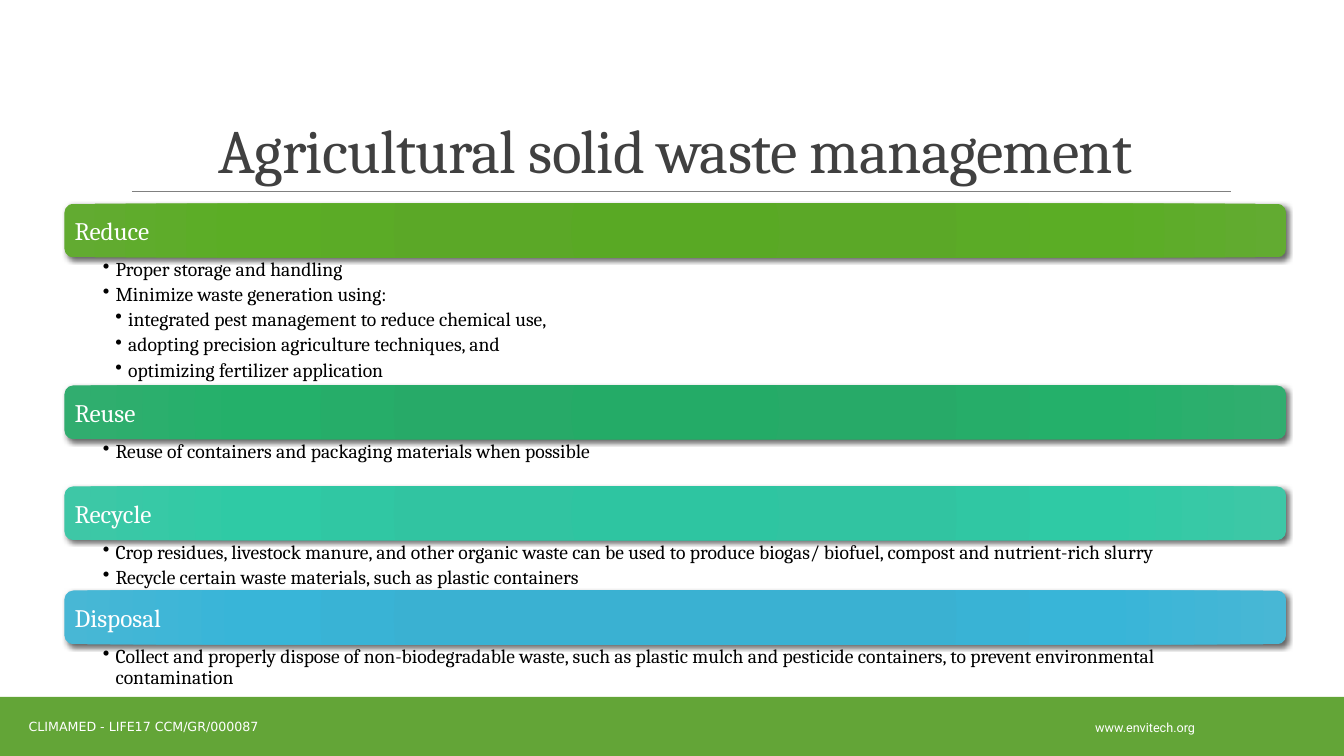
from dataclasses import dataclass

from lxml.etree import SubElement
from pptx import Presentation
from pptx.dml.color import RGBColor
from pptx.enum.shapes import MSO_CONNECTOR, MSO_SHAPE
from pptx.enum.text import MSO_ANCHOR, MSO_AUTO_SIZE, PP_ALIGN
from pptx.oxml import parse_xml
from pptx.oxml.ns import nsdecls, qn
from pptx.util import Pt


@dataclass(frozen=True)
class Theme:
    serif: str = "Cambria"
    ink: str = "000000"
    white: str = "FFFFFF"
    dark: str = "404040"
    rule: str = "808080"
    foot: str = "63A537"
    title: float = 44
    head: float = 18
    body: float = 14
    small: float = 9


class Deck:
    def __init__(self, theme):
        self.theme = theme
        self.prs = Presentation()
        self.prs.slide_width, self.prs.slide_height = Pt(960), Pt(540)
        self.slide = self.prs.slides.add_slide(self.prs.slide_layouts[5])

    def style(self, para, size, color, face):
        for run in para.runs:
            run.font.size = Pt(size)
            run.font.name = face
            run.font.color.rgb = RGBColor.from_string(color)

    def title(self, text, x, y, w, h):
        shape = self.slide.shapes.title
        shape.left, shape.top, shape.width, shape.height = map(Pt, (x, y, w, h))
        frame = shape.text_frame
        frame.text = text
        frame.word_wrap = True
        frame.auto_size = MSO_AUTO_SIZE.NONE
        frame.vertical_anchor = MSO_ANCHOR.BOTTOM
        para = frame.paragraphs[0]
        para.alignment = PP_ALIGN.CENTER
        para.line_spacing = 0.85
        self.style(para, self.theme.title, self.theme.dark, self.theme.serif)
        para.runs[0].font._element.set("spc", "-50")

    def line(self, x1, y1, x2, y2):
        line = self.slide.shapes.add_connector(
            MSO_CONNECTOR.STRAIGHT, Pt(x1), Pt(y1), Pt(x2), Pt(y2))
        line.line.color.rgb = RGBColor.from_string(self.theme.rule)
        line.line.width = Pt(0.5)
        SubElement(line._element.spPr, qn("a:effectLst"))

    def rect(self, x, y, w, h, color):
        shape = self.slide.shapes.add_shape(
            MSO_SHAPE.RECTANGLE, Pt(x), Pt(y), Pt(w), Pt(h))
        shape.shadow.inherit = False
        shape.fill.solid()
        shape.fill.fore_color.rgb = RGBColor.from_string(color)
        shape.line.fill.background()

    def bar(self, x, y, w, h, colors):
        shape = self.slide.shapes.add_shape(
            MSO_SHAPE.ROUNDED_RECTANGLE, Pt(x), Pt(y), Pt(w), Pt(h))
        shape.line.fill.background()
        stops = "".join(
            f'<a:gs pos="{pos}000"><a:srgbClr val="{color}"/></a:gs>'
            for pos, color in zip((0, 34, 70, 100), colors))
        props = shape._element.spPr
        props.find(qn("a:prstGeom")).addnext(parse_xml(
            f'<a:gradFill {nsdecls("a")} rotWithShape="1"><a:gsLst>{stops}</a:gsLst>'
            '<a:path path="circle"><a:fillToRect l="100000" t="100000" '
            'r="100000" b="100000"/></a:path></a:gradFill>'))
        props.append(parse_xml(
            f'<a:effectLst {nsdecls("a")}><a:outerShdw blurRad="{Pt(3.5)}" '
            f'dist="{Pt(2)}" dir="2700000" algn="br" rotWithShape="0">'
            '<a:srgbClr val="000000"><a:alpha val="60000"/></a:srgbClr>'
            '</a:outerShdw></a:effectLst>'))

    def box(self, x, y, w, h, pads, anchor):
        shape = self.slide.shapes.add_textbox(Pt(x), Pt(y), Pt(w), Pt(h))
        frame = shape.text_frame
        frame.word_wrap = True
        frame.vertical_anchor = anchor
        (frame.margin_left, frame.margin_top,
         frame.margin_right, frame.margin_bottom) = map(Pt, pads)
        return frame

    def label(self, text, x, y, w, h, size, face, pads, align):
        frame = self.box(x, y, w, h, pads, MSO_ANCHOR.MIDDLE)
        frame.text = text
        para = frame.paragraphs[0]
        para.alignment = align
        self.style(para, size, self.theme.white, face)

    def list(self, items, x, y, w, h):
        frame = self.box(x, y, w, h, (27.5, 1.6, 7.7, 1.6), MSO_ANCHOR.TOP)
        for num, (level, text) in enumerate(items):
            para = frame.paragraphs[0] if num == 0 else frame.add_paragraph()
            para.text = text
            para.level = level
            para.line_spacing = 0.9
            para.space_after = Pt(2.8)
            props = para._p.get_or_add_pPr()
            props.set("marL", str(Pt(9 * level)))
            props.set("indent", str(Pt(-9)))
            SubElement(props, qn("a:buChar")).set("char", "•")
            self.style(para, self.theme.body, self.theme.ink, self.theme.serif)


# Heading, gradient colours, list height, list of (level, text)
STEPS = [
    ("Reduce", ("59A924", "5BA827", "5BAD25", "62AB31"), 91.4, [
        (1, "Proper storage and handling"),
        (1, "Minimize waste generation using:"),
        (2, "integrated pest management to reduce chemical use,"),
        (2, "adopting precision agriculture techniques, and"),
        (2, "optimizing fertilizer application")]),
    ("Reuse", ("24AB67", "27AA68", "24B06A", "31AD6F"), 33.7, [
        (1, "Reuse of containers and packaging materials when possible")]),
    ("Recycle", ("2EC5A1", "31C4A1", "2FCAA5", "3EC7A6"), 36, [
        (1, "Crop residues, livestock manure, and other organic waste can be used "
            "to produce biogas/ biofuel, compost and nutrient-rich slurry"),
        (1, "Recycle certain waste materials, such as plastic containers")]),
    ("Disposal", ("37B1D3", "3AB1D2", "38B5D8", "48B7D5"), 33.7, [
        (1, "Collect and properly dispose of non-biodegradable waste, such as "
            "plastic mulch and pesticide containers, to prevent environmental "
            "contamination")]),
]


def main():
    theme = Theme()
    deck = Deck(theme)

    # Title and rule
    deck.line(94.3, 136.8, 879, 136.8)
    deck.title("Agricultural solid waste management", 86.4, 22.3, 792, 114.5)

    # Footer
    deck.rect(0, 497.7, 960, 42.3, theme.foot)
    pads = (7.2, 3.6, 7.2, 3.6)
    deck.label("www.envitech.org", 729.4, 504.9, 177, 28.8,
               theme.small, "Roboto", pads, PP_ALIGN.CENTER)
    deck.label("CLIMAMED - LIFE17 CCM/GR/000087", 0, 504.2, 205, 28.8,
               theme.small, "DejaVu Sans", pads, PP_ALIGN.CENTER)

    # Stack of bars, each with its list below
    left, top, wide, tall, edge = 46, 145.5, 872.6, 38.4, 1.9
    for head, colors, depth, items in STEPS:
        deck.bar(left, top, wide, tall, colors)
        deck.label(head, left + edge, top + edge, wide - 2 * edge, tall - 2 * edge,
                   theme.head, theme.serif, (5.4,) * 4, PP_ALIGN.LEFT)
        deck.list(items, left, top + tall, wide, depth)
        top += tall + depth

    deck.prs.save("out.pptx")


if __name__ == "__main__":
    main()
